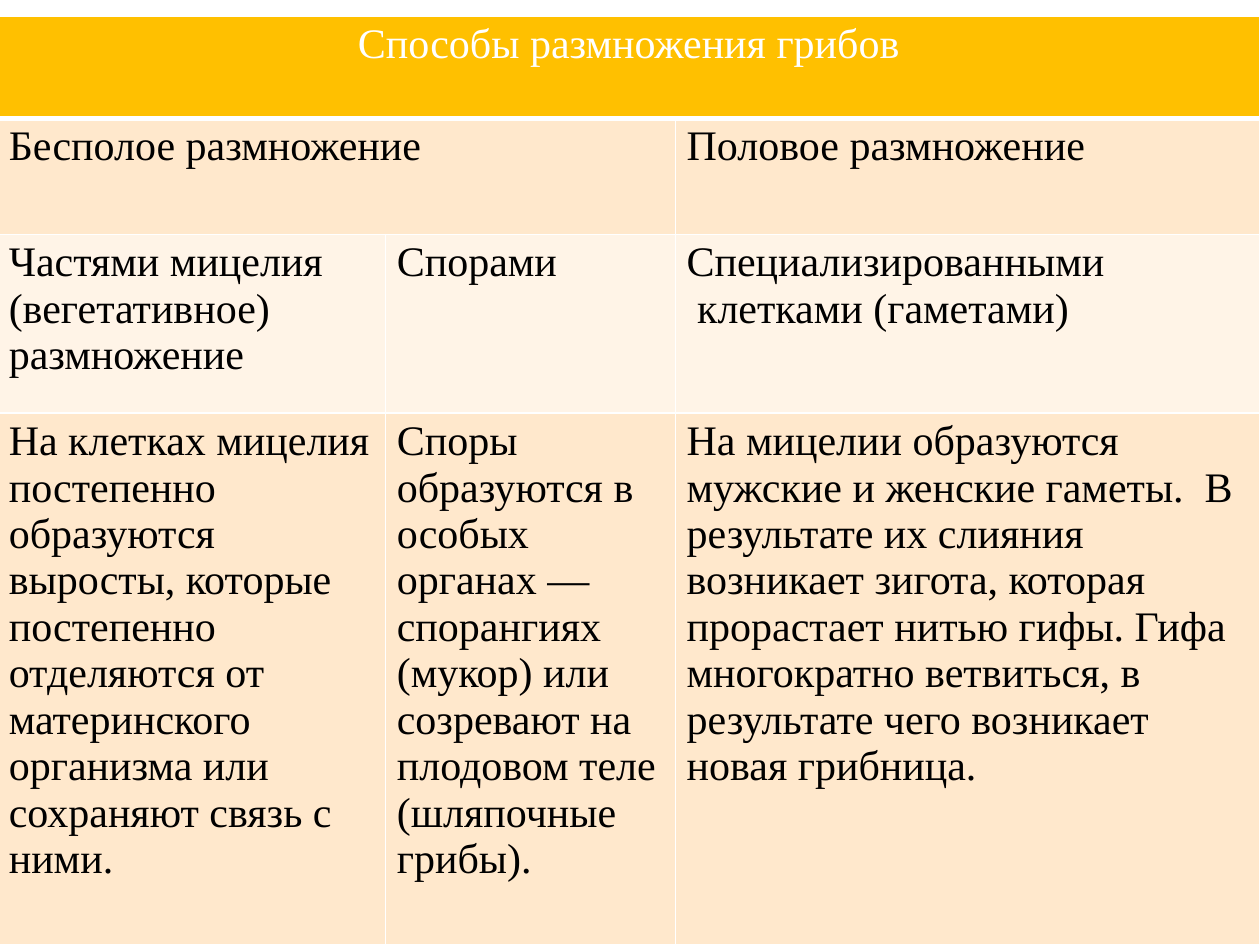
from lxml import etree
from pptx import Presentation
from pptx import util as u
from pptx.dml.color import RGBColor
from pptx.enum import text
from pptx.oxml.ns import qn

WIDE, HIGH = u.Inches(10), u.Inches(7.5)
FACE = "Times New Roman"
GOLD = RGBColor(0xFF, 0xC0, 0x00)
PEACH = RGBColor(0xFF, 0xE8, 0xCC)
CREAM = RGBColor(0xFF, 0xF4, 0xE7)
WHITE = RGBColor(0xFF, 0xFF, 0xFF)
BLACK = RGBColor(0, 0, 0)

COLS = (3.08, 2.3, 4.64)
ROWS = (0.81, 0.92, 1.42, 4.22)
FILLS = (GOLD, PEACH, CREAM, PEACH)
SPANS = ((0, 0, 2), (1, 0, 1))
WORDS = (
    ("Способы размножения грибов", "", ""),
    ("Бесполое размножение", "", "Половое размножение"),
    ("Частями мицелия (вегетативное) размножение", "Спорами",
     "Специализированными\n клетками (гаметами)"),
    ("На клетках мицелия постепенно образуются выросты, которые постепенно "
     "отделяются от материнского организма или сохраняют связь с ними.",
     "Споры образуются в особых органах — спорангиях (мукор) или "
     "созревают на плодовом теле (шляпочные грибы).",
     "На мицелии образуются мужские и женские гаметы.  В результате их "
     "слияния возникает зигота, которая прорастает нитью гифы. Гифа "
     "многократно ветвиться, в результате чего возникает новая грибница."),
)


def write(frame, words, size=24, color=BLACK, align=text.PP_ALIGN.LEFT):
    """Fill a text frame, one paragraph for each line of words."""
    frame.text = words
    for para in frame.paragraphs:
        para.alignment = align
        for run in para.runs:
            font = run.font
            font.name, font.size, font.bold = FACE, u.Pt(size), False
            font.color.rgb = color


def edge(cell, **widths):
    """Give a cell white borders, one point wide unless a side is named."""
    props = cell._tc.get_or_add_tcPr()
    for side in "LRTB":
        line = etree.SubElement(props, qn(f"a:ln{side}"),
                                w=str(u.Pt(widths.get(side, 1))))
        fill = etree.SubElement(line, qn("a:solidFill"))
        etree.SubElement(fill, qn("a:srgbClr"), val=str(WHITE))


def paint(cell, words, fill, head):
    """Format one cell of the table as a heading or as body text."""
    edge(cell, **({"B": 3} if head else {}))
    cell.fill.solid()
    cell.fill.fore_color.rgb = fill
    cell.margin_left = cell.margin_right = u.Inches(0.09)
    cell.margin_top = cell.margin_bottom = u.Inches(0.04)
    if words and head:
        write(cell.text_frame, words, color=WHITE, align=text.PP_ALIGN.CENTER)
    elif words:
        write(cell.text_frame, words)


def chart_ways(slide, left, top, width, height):
    """Place the table of ways of reproduction in the given box."""
    grid = slide.shapes.add_table(len(ROWS), len(COLS),
                                  left, top, width, height).table
    for col, share in zip(grid.columns, COLS):
        col.width = int(width * share / sum(COLS))
    for row, share in zip(grid.rows, ROWS):
        row.height = int(height * share / sum(ROWS))
    for row, first, last in SPANS:
        grid.cell(row, first).merge(grid.cell(row, last))
    for r, (line, fill) in enumerate(zip(WORDS, FILLS)):
        for c, words in enumerate(line):
            paint(grid.cell(r, c), words, fill, head=r == 0)


def main():
    """Build the slide and save it."""
    deck = Presentation()
    deck.slide_width, deck.slide_height = WIDE, HIGH
    slide = deck.slides.add_slide(deck.slide_layouts[6])
    left, top = u.Inches(-0.02), u.Inches(0.13)
    chart_ways(slide, left, top, WIDE - left, HIGH - top)
    deck.save("out.pptx")


if __name__ == "__main__":
    main()
